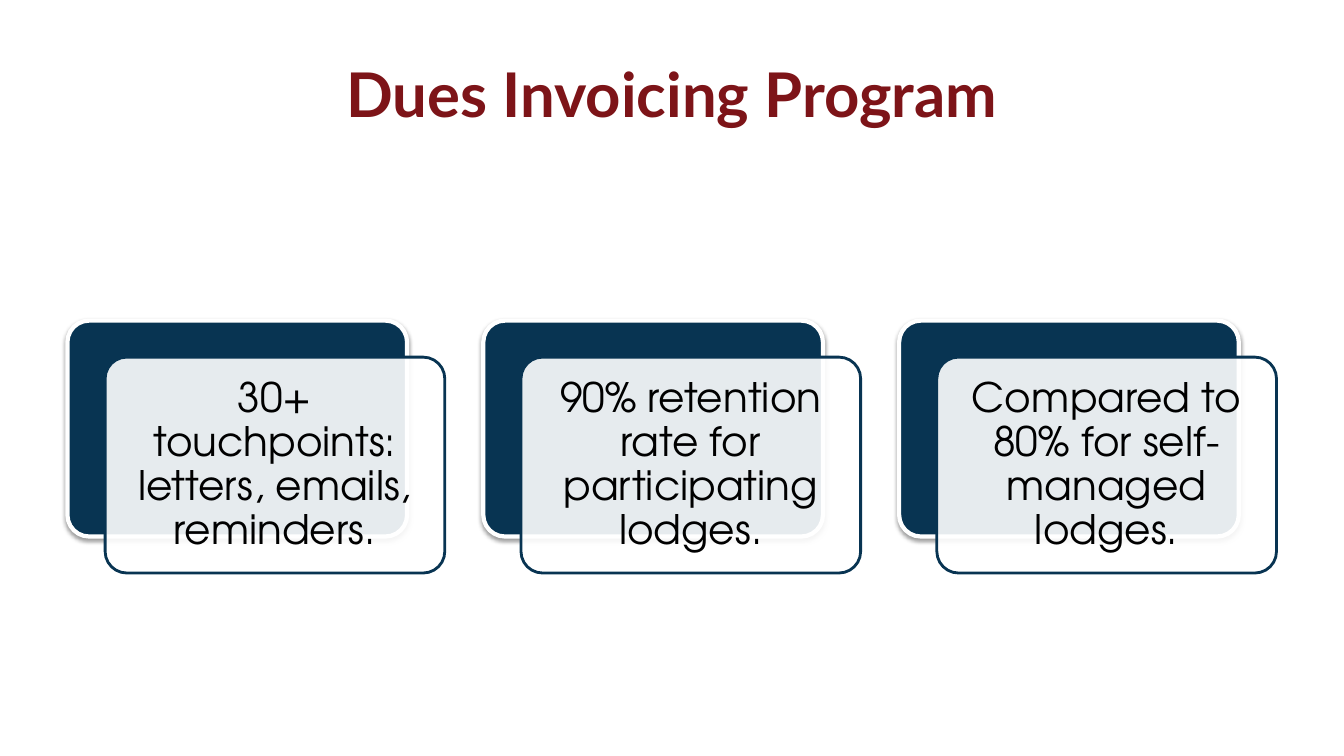
import dataclasses

import pptx
import pptx.dml.color
import pptx.enum.shapes
import pptx.enum.text
import pptx.oxml
import pptx.oxml.ns
import pptx.util

Cm, Pt = pptx.util.Cm, pptx.util.Pt
RGB = pptx.dml.color.RGBColor.from_string
ALIGN = pptx.enum.text.PP_ALIGN
MIDDLE = pptx.enum.text.MSO_ANCHOR.MIDDLE
ROUND = pptx.enum.shapes.MSO_SHAPE.ROUNDED_RECTANGLE
SHADE = (
    f'<a:outerShdw {pptx.oxml.ns.nsdecls("a")} blurRad="{Pt(3.1)}" '
    f'dist="{Pt(1.6)}" dir="5400000" rotWithShape="0">'
    '<a:srgbClr val="000000"><a:alpha val="38000"/></a:srgbClr></a:outerShdw>'
)


@dataclasses.dataclass(frozen=True)
class Theme:
    """Colours, fonts and type sizes of the slide."""
    navy: str = "083452"
    red: str = "7D1418"
    white: str = "FFFFFF"
    black: str = "000000"
    head: str = "Lato"
    body: str = "TeX Gyre Adventor"
    big: int = 44
    mid: int = 29


THEME = Theme()
CARDS = (
    "30+ touchpoints: letters, emails, reminders.",
    "90% retention rate for participating lodges.",
    "Compared to 80% for self-managed lodges.",
)


def assign(item, form):
    """Set each attribute of an item from a dict."""
    for name, value in form.items():
        setattr(item, name, value)


def write(shapes, box, text, font, color, para=None, inset=0.25):
    """Place centred text in a box."""
    frame = shapes.add_textbox(*map(Cm, box)).text_frame
    sides = ("left", "top", "right", "bottom")
    assign(frame, {f"margin_{side}": Cm(inset) for side in sides})
    assign(frame, {"word_wrap": True, "vertical_anchor": MIDDLE})
    line = frame.paragraphs[0]
    assign(line, {"alignment": ALIGN.CENTER, **(para or {})})
    run = line.add_run()
    run.text = text
    assign(run.font, font)
    run.font.color.rgb = RGB(color)


def panel(shapes, box, fill, edge, width):
    """Place a rounded panel and return it."""
    shape = shapes.add_shape(ROUND, *map(Cm, box))
    shape.adjustments[0] = 0.1
    shape.shadow.inherit = False
    shape.fill.solid()
    shape.fill.fore_color.rgb = RGB(fill)
    shape.line.color.rgb = RGB(edge)
    shape.line.width = Pt(width)
    return shape


def card(shapes, box, text):
    """Place a dark panel, a clear panel over it, and its text."""
    left, top, wide, high = box
    back = panel(shapes, box, THEME.navy, THEME.white, 3)
    effects = back._element.spPr.find(pptx.oxml.ns.qn("a:effectLst"))
    effects.append(pptx.oxml.parse_xml(SHADE))

    left, top = left + 0.95, top + 0.92
    front = panel(shapes, (left, top, wide, high), THEME.white, THEME.navy, 2)
    tint = front._element.spPr.find(".//" + pptx.oxml.ns.qn("a:srgbClr"))
    tint.append(pptx.oxml.parse_xml(
        f'<a:alpha {pptx.oxml.ns.nsdecls("a")} val="90000"/>'))

    pad = 0.15
    area = (left + pad, top + pad, wide - 2 * pad, high - 2 * pad)
    font = {"name": THEME.body, "size": Pt(THEME.mid)}
    para = {"line_spacing": 0.9, "space_after": Pt(10)}
    write(shapes, area, text, font, THEME.black, para, 0.3)


def title(shapes, box, text):
    """Place the slide title."""
    font = {"name": THEME.head, "size": Pt(THEME.big), "bold": True}
    write(shapes, box, text, font, THEME.red)


def row(shapes, box, texts, step):
    """Place a row of cards, the first one in the box."""
    left, top, wide, high = box
    for index, text in enumerate(texts):
        card(shapes, (left + index * step, top, wide, high), text)


def main():
    """Build and save the slide."""
    deck = pptx.Presentation()
    assign(deck, {"slide_width": Cm(33.87), "slide_height": Cm(19.05)})
    shapes = deck.slides.add_slide(deck.slide_layouts[6]).shapes
    title(shapes, (1.7, 0.76, 30.48, 3.18), "Dues Invoicing Program")
    group = shapes.add_group_shape()
    row(group.shapes, (1.7, 8.08, 8.56, 5.44), CARDS, 10.48)
    deck.save("out.pptx")


if __name__ == "__main__":
    main()
